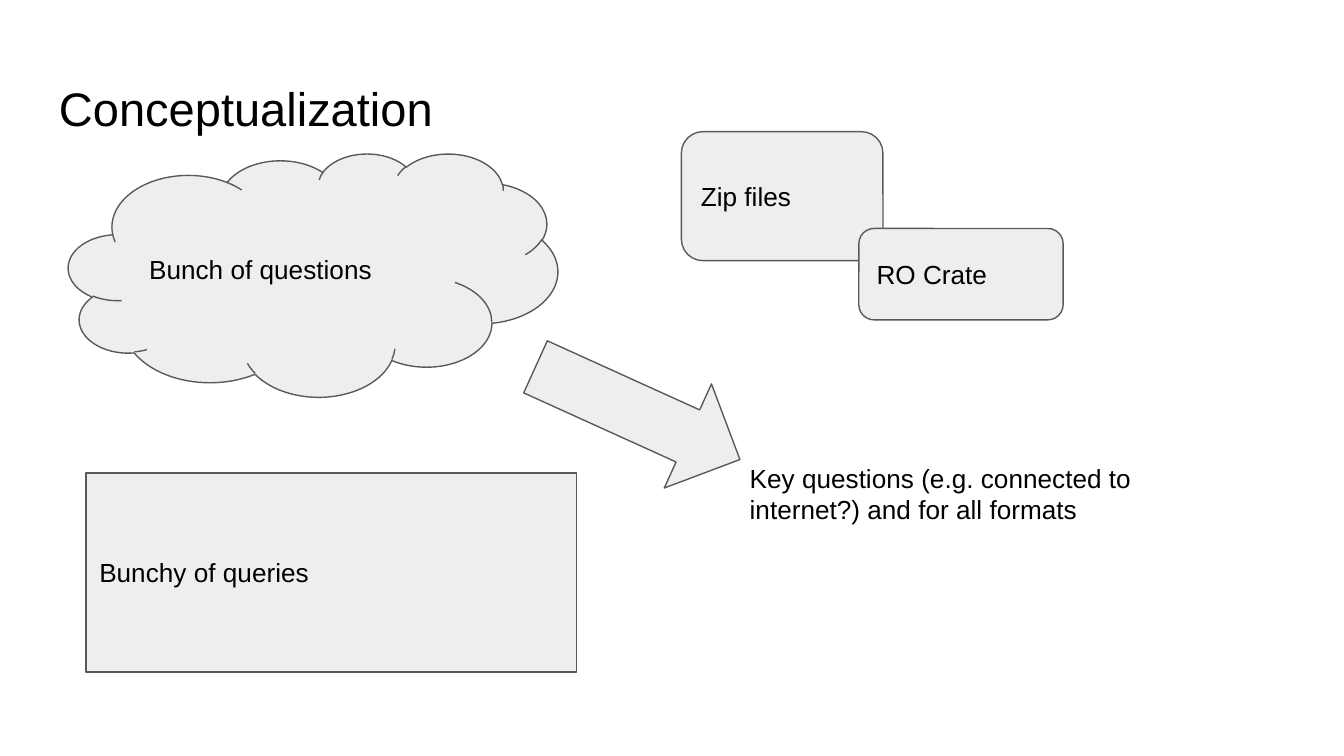
from pptx import Presentation
from pptx.dml.color import RGBColor
from pptx.enum.shapes import MSO_SHAPE
from pptx.enum.text import MSO_ANCHOR, PP_ALIGN
from pptx.util import Inches, Pt

CLOUD = MSO_SHAPE.CLOUD
RECT = MSO_SHAPE.RECTANGLE
ROUND = MSO_SHAPE.ROUNDED_RECTANGLE
ARROW = MSO_SHAPE.RIGHT_ARROW
TOP, MIDDLE = MSO_ANCHOR.TOP, MSO_ANCHOR.MIDDLE
LEFT = PP_ALIGN.LEFT

COLORS = {"text": "000000", "fill": "EEEEEE", "line": "595959"}
FONT = "Arial"


def color(name):
    return RGBColor.from_string(COLORS[name])


def write(shape, text, size=14, anchor=MIDDLE):
    frame = shape.text_frame
    frame.word_wrap = True
    frame.vertical_anchor = anchor
    frame.margin_left = frame.margin_right = Inches(0.1)
    frame.margin_top = frame.margin_bottom = Inches(0.1)
    para = frame.paragraphs[0]
    para.alignment = LEFT
    run = para.add_run()
    run.text = text
    run.font.name = FONT
    run.font.size = Pt(size)
    run.font.color.rgb = color("text")


def add_label(slide, box, text, size=14):
    label = slide.shapes.add_textbox(*map(Inches, box))
    write(label, text, size, TOP)


def add_block(slide, kind, box, text=None):
    block = slide.shapes.add_shape(kind, *map(Inches, box))
    block.shadow.inherit = False
    block.fill.solid()
    block.fill.fore_color.rgb = color("fill")
    block.line.color.rgb = color("line")
    block.line.width = Pt(0.75)
    if text:
        write(block, text)
    return block


def main():
    deck = Presentation()
    deck.slide_width = Inches(10)
    deck.slide_height = Inches(10 * 9 / 16)
    slide = deck.slides.add_slide(deck.slide_layouts[6])

    add_label(slide, (0.34, 0.49, 9.32, 0.63), "Conceptualization", 25.2)
    add_block(slide, CLOUD, (0.51, 1.14, 3.64, 1.81), "Bunch of questions")
    add_block(slide, RECT, (0.64, 3.52, 3.65, 1.48), "Bunchy of queries")
    add_block(slide, ROUND, (5.07, 0.98, 1.5, 0.96), "Zip files")
    add_block(slide, ROUND, (6.39, 1.7, 1.52, 0.68), "RO Crate")
    add_label(slide, (5.48, 3.34, 3.47, 0.67),
              "Key questions (e.g. connected to internet?) and for all formats")
    arrow = add_block(slide, ARROW, (3.91, 2.65, 1.67, 0.85))
    arrow.rotation = 24.4

    deck.save("out.pptx")


if __name__ == "__main__":
    main()
